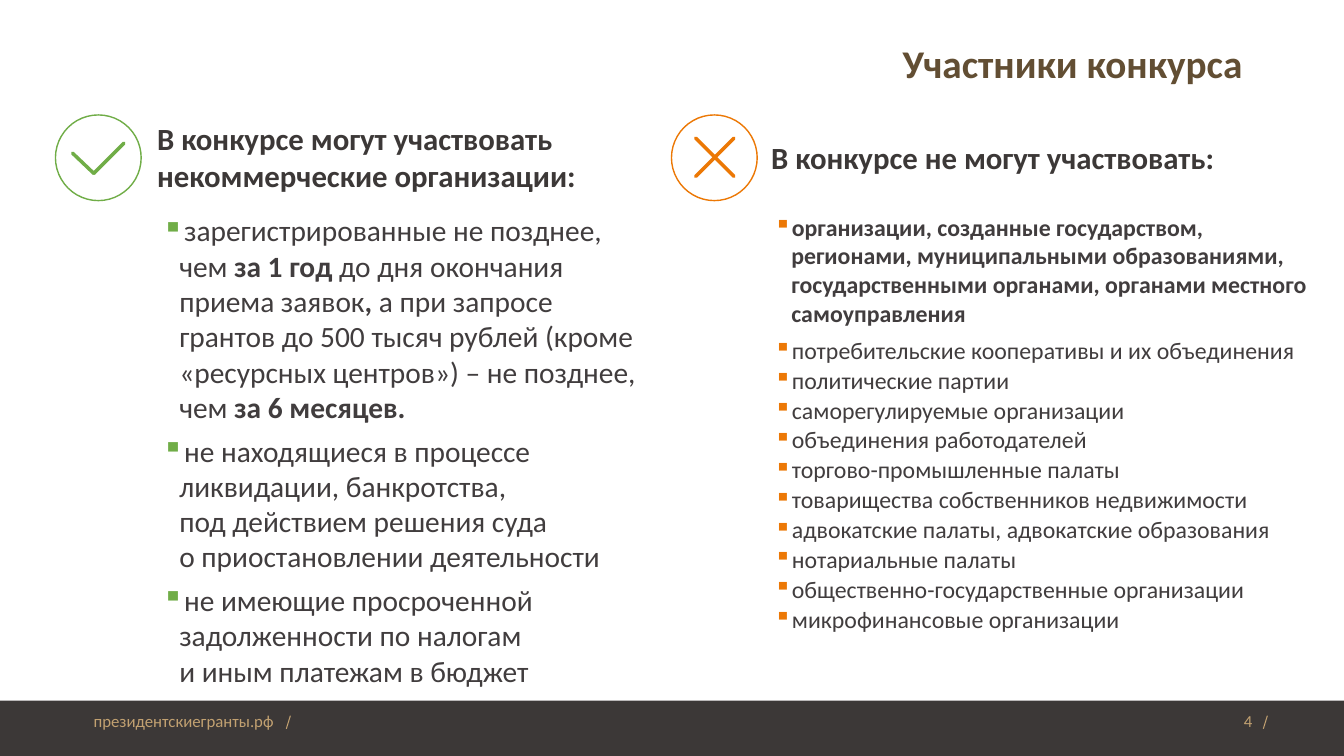
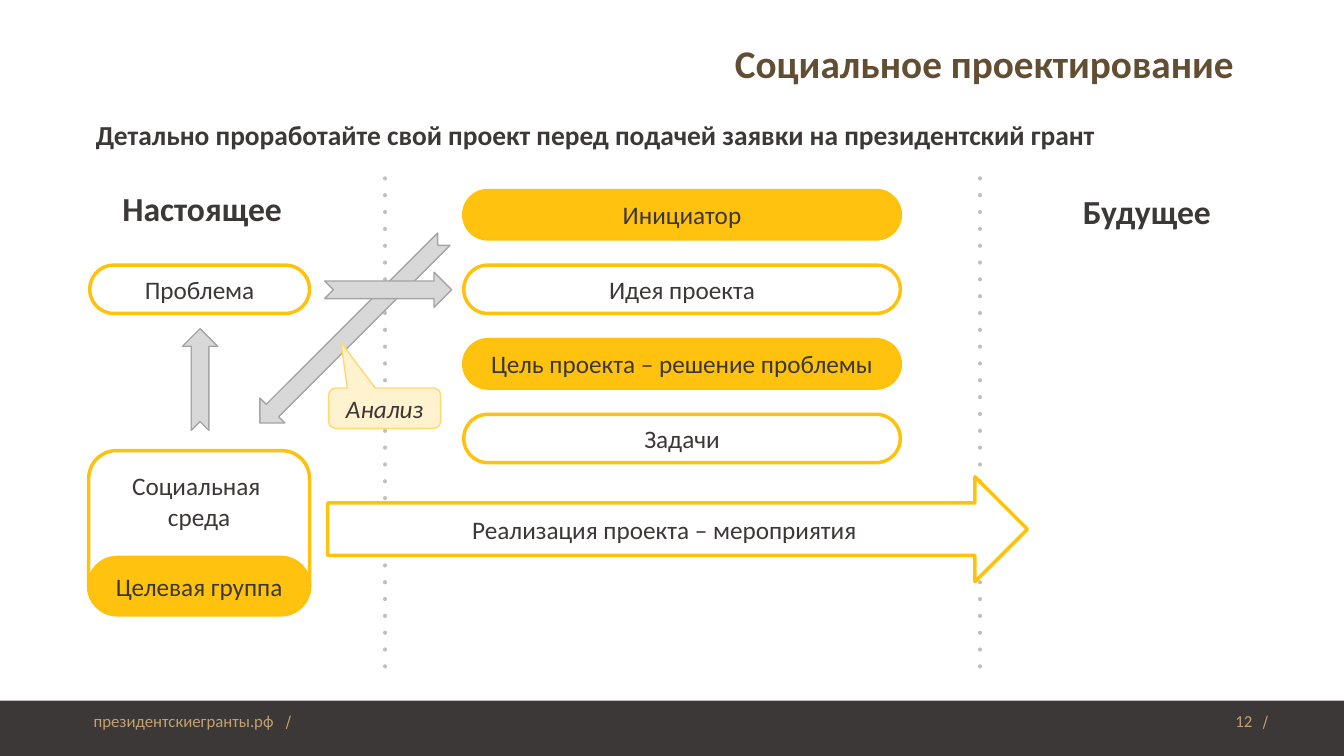
from dataclasses import dataclass
from typing import Any, Optional

import pptx
import pptx.dml.color
import pptx.enum.dml
import pptx.enum.shapes
import pptx.enum.text
import pptx.oxml.ns
import pptx.slide
import pptx.util
from lxml import etree

Inches = pptx.util.Inches
Pt = pptx.util.Pt
Preset = pptx.enum.shapes.MSO_SHAPE
Align = pptx.enum.text.PP_ALIGN
Anchor = pptx.enum.text.MSO_ANCHOR

FONT = "Calibri"
DARK = "3C3837"
BODY = "413D3E"
BROWN = "624E33"
SAND = "C2A171"
GREEN = "70AD47"
ORANGE = "EC7805"
YELLOW = "FFC20F"
YELLOW_LINE = "FFC20C"
GREY = "D8D8D8"
GREY_LINE = "A5A5A5"
DOT_GREY = "BFBFBF"
INSETS = (0.1, 0.05, 0.1, 0.05)


@dataclass(frozen=True)
class Area:
    left: float
    top: float
    width: float
    height: float

    def lengths(self) -> tuple:
        return tuple(Inches(v) for v in (self.left, self.top, self.width, self.height))


@dataclass(frozen=True)
class Span:
    text: str
    bold: bool = False


@dataclass(frozen=True)
class Para:
    spans: tuple[Span, ...]
    before: float = 0


@dataclass(frozen=True)
class Style:
    size: float
    color: str = DARK
    bold: bool = False
    italic: bool = False
    align: Any = Align.LEFT
    anchor: Any = Anchor.TOP
    insets: tuple = INSETS
    bullet: Optional[str] = None
    line_spacing: Optional[float] = None


@dataclass(frozen=True)
class Figure:
    """A preset shape, with its text if it has any."""
    area: Area
    preset: Any
    fill: Optional[str] = None
    line: Optional[str] = None
    weight: float = 1
    adjust: tuple = ()
    turn: float = 0
    text: str = ""
    style: Optional[Style] = None


@dataclass(frozen=True)
class Stroke:
    start: tuple[float, float]
    end: tuple[float, float]
    color: str
    weight: float
    dash: Optional[str] = None
    rounded: bool = False


TITLE = Style(28, BROWN, bold=True, align=Align.RIGHT, anchor=Anchor.MIDDLE, line_spacing=0.9)
FOOTER = Style(12, SAND, anchor=Anchor.MIDDLE)
PAGE_NUMBER = Style(12, SAND, align=Align.RIGHT, anchor=Anchor.MIDDLE)
HEADING = Style(22, bold=True)
LEAD = Style(19.6, bold=True, insets=(0.06, 0.03, 0.06, 0.03))
ERA = Style(24, bold=True, align=Align.CENTER, anchor=Anchor.MIDDLE)
LABEL = Style(18, align=Align.CENTER, anchor=Anchor.MIDDLE, insets=(0.05,) * 4)
TOP_LABEL = Style(18, align=Align.CENTER, insets=(0.05, 0.12, 0.05, 0.05))
CALLOUT = Style(18, italic=True, align=Align.CENTER, anchor=Anchor.MIDDLE, insets=(0.05,) * 4)


def rgb(color: str) -> pptx.dml.color.RGBColor:
    return pptx.dml.color.RGBColor.from_string(color)


def apply(target: Any, values: dict) -> None:
    for name, value in values.items():
        setattr(target, name, value)


def plain(text: str, before: float = 0, bold: bool = False) -> Para:
    return Para((Span(text, bold),), before)


def add_bullet(para: Any, color: str) -> None:
    props = para._p.get_or_add_pPr()
    apply_xml = {"marL": Inches(0.2), "indent": Inches(-0.17)}
    for name, value in apply_xml.items():
        props.set(name, str(int(value)))
    tint = etree.SubElement(props, pptx.oxml.ns.qn("a:buClr"))
    etree.SubElement(tint, pptx.oxml.ns.qn("a:srgbClr")).set("val", color)
    etree.SubElement(props, pptx.oxml.ns.qn("a:buChar")).set("char", "▪")


def write(frame: Any, paras: list[Para], style: Style) -> None:
    left, top, right, bottom = (Inches(v) for v in style.insets)
    apply(frame, {"word_wrap": True, "vertical_anchor": style.anchor, "margin_left": left,
                  "margin_top": top, "margin_right": right, "margin_bottom": bottom})
    for index, item in enumerate(paras):
        para = frame.paragraphs[0] if index == 0 else frame.add_paragraph()
        if style.bullet:
            add_bullet(para, style.bullet)
        apply(para, {"alignment": style.align, "space_before": Pt(item.before),
                     "line_spacing": style.line_spacing})
        for span in item.spans:
            for number, line in enumerate(span.text.split("\n")):
                if number:
                    para.add_line_break()
                run = para.add_run()
                run.text = line
                apply(run.font, {"name": FONT, "size": Pt(style.size),
                                 "bold": style.bold or span.bold, "italic": style.italic})
                run.font.color.rgb = rgb(style.color)


def add_text(page: pptx.slide.Slide, area: Area, paras: list[Para], style: Style) -> None:
    box = page.shapes.add_textbox(*area.lengths())
    write(box.text_frame, paras, style)


def add_figure(page: pptx.slide.Slide, figure: Figure) -> None:
    shape = page.shapes.add_shape(figure.preset, *figure.area.lengths())
    shape.shadow.inherit = False
    shape.rotation = figure.turn
    for index, value in enumerate(figure.adjust):
        shape.adjustments[index] = value
    for paint, color in ((shape.fill, figure.fill), (shape.line.fill, figure.line)):
        if color:
            paint.solid()
            paint.fore_color.rgb = rgb(color)
        else:
            paint.background()
    if figure.line:
        shape.line.width = Pt(figure.weight)
    if figure.style:
        write(shape.text_frame, [plain(figure.text)], figure.style)


def add_stroke(page: pptx.slide.Slide, stroke: Stroke) -> None:
    ends = [Inches(v) for v in stroke.start + stroke.end]
    connector = page.shapes.add_connector(pptx.enum.shapes.MSO_CONNECTOR.STRAIGHT, *ends)
    connector.line.color.rgb = rgb(stroke.color)
    connector.line.width = Pt(stroke.weight)
    props = connector.element.spPr
    outline = props.find(pptx.oxml.ns.qn("a:ln"))
    if stroke.rounded:
        outline.set("cap", "rnd")
    if stroke.dash:
        etree.SubElement(outline, pptx.oxml.ns.qn("a:prstDash")).set("val", stroke.dash)
    etree.SubElement(props, pptx.oxml.ns.qn("a:effectLst"))


def add_page(deck: Any, title: str, number: int) -> pptx.slide.Slide:
    """Add a slide with the shared title, footer band and page number."""
    page = deck.slides.add_slide(deck.slide_layouts[6])
    add_figure(page, Figure(Area(0, 6.95, 13.33, 0.55), Preset.RECTANGLE, DARK))
    add_text(page, Area(0.83, 6.95, 3.03, 0.4), [plain("президентскиегранты.рф")], FOOTER)
    for x in (2.84, 12.53):
        add_stroke(page, Stroke((x + 0.04, 7.1), (x, 7.23), SAND, 0.75))
    add_text(page, Area(2.69, 0.21, 9.73, 0.89), [plain(title)], TITLE)
    add_text(page, Area(11.68, 6.95, 0.84, 0.4), [plain(str(number))], PAGE_NUMBER)
    return page


def add_participants(deck: Any) -> None:
    page = add_page(deck, "Участники конкурса", 4)
    add_text(page, Area(1.46, 1.14, 5.11, 0.84),
             [plain("В конкурсе могут участвовать некоммерческие организации:")], HEADING)
    add_text(page, Area(7.55, 1.33, 5.45, 0.47),
             [plain("В конкурсе не могут участвовать:")], HEADING)

    allowed = [
        Para((Span("зарегистрированные не позднее,\nчем"), Span(" за 1 год ", True),
              Span("до дня окончания приема заявок"), Span(", ", True),
              Span("а при запросе грантов до 500 тысяч рублей "
                   "(кроме «ресурсных центров») – не позднее, чем "),
              Span("за 6 месяцев.", True))),
        plain("не находящиеся в процессе ликвидации, банкротства,\n"
              "под действием решения суда\nо приостановлении деятельности", 6),
        plain("не имеющие просроченной задолженности по налогам\nи иным платежам в бюджет", 6),
    ]
    add_text(page, Area(1.48, 2.06, 5.02, 5.04), allowed, Style(21, BODY, bullet=GREEN))

    excluded = [
        plain("организации, созданные государством, регионами, муниципальными образованиями, "
              "государственными органами, органами местного самоуправления", bold=True),
        plain("потребительские кооперативы и их объединения", 6),
    ]
    excluded += [plain(name, 1) for name in (
        "политические партии", "саморегулируемые организации", "объединения работодателей",
        "торгово-промышленные палаты", "товарищества собственников недвижимости",
        "адвокатские палаты, адвокатские образования", "нотариальные палаты",
        "общественно-государственные организации", "микрофинансовые организации")]
    add_text(page, Area(7.55, 2.06, 5.73, 4.55), excluded, Style(17, BODY, bullet=ORANGE))

    check = (((0.93, 1.72), (1.23, 1.42)), ((0.93, 1.72), (0.72, 1.52)))
    cross = (((6.9, 1.75), (7.28, 1.37)), ((7.28, 1.75), (6.9, 1.37)))
    for left, color, marks in ((0.55, GREEN, check), (6.66, ORANGE, cross)):
        add_figure(page, Figure(Area(left, 1.14, 0.85, 0.85), Preset.OVAL, line=color))
        for start, end in marks:
            add_stroke(page, Stroke(start, end, color, 2.5, rounded=True))


def pill(area: Area, text: str, fill: Optional[str] = None) -> Figure:
    return Figure(area, Preset.ROUNDED_RECTANGLE, fill, YELLOW_LINE, 2.5, (0.5,),
                  text=text, style=LABEL)


def grey_arrow(area: Area, turn: float = 0) -> Figure:
    return Figure(area, Preset.NOTCHED_RIGHT_ARROW, GREY, GREY_LINE, 1, (0.5, 0.5), turn)


def add_project_design(deck: Any) -> None:
    page = add_page(deck, "Социальное проектирование ", 12)
    for x in (3.82, 9.72):
        add_stroke(page, Stroke((x, 1.77), (x, 6.65), DOT_GREY, 3, "dot", True))
    add_text(page, Area(0.89, 1.14, 11.25, 0.68),
             [plain("Детально проработайте свой проект перед подачей заявки "
                    "на президентский грант")], LEAD)
    add_text(page, Area(1.02, 1.82, 1.97, 0.48), [plain("Настоящее")], ERA)
    add_text(page, Area(10.44, 1.84, 1.87, 0.51), [plain("Будущее")], ERA)

    steps = (("Инициатор", YELLOW), ("Идея проекта", None),
             ("Цель проекта – решение проблемы", YELLOW), ("Задачи", None))
    figures = [pill(Area(4.6, 1.89 + 0.74 * row, 4.33, 0.48), text, fill)
               for row, (text, fill) in enumerate(steps)]
    figures += [
        Figure(Area(3.25, 4.73, 6.94, 1.04), Preset.RIGHT_ARROW, "FFFFFF", YELLOW_LINE, 2.5,
               (0.5, 0.5), text="Реализация проекта – мероприятия", style=LABEL),
        pill(Area(0.89, 2.63, 2.18, 0.48), "Проблема"),
        pill(Area(0.88, 5.53, 2.19, 0.57), "Целевая группа", YELLOW),
        Figure(Area(0.88, 4.47, 2.19, 1.62), Preset.ROUNDED_RECTANGLE, None, YELLOW_LINE, 2.5,
               (0.17,), text="Социальная \nсреда", style=TOP_LABEL),
        grey_arrow(Area(2.2, 3.11, 2.58, 0.35), 135),
        Figure(Area(3.26, 3.85, 1.11, 0.4), Preset.ROUNDED_RECTANGULAR_CALLOUT, "FFF2CF",
               "FFD96F", 1, (-0.39, -1.63, 0.17), text="Анализ", style=CALLOUT),
        grey_arrow(Area(1.48, 3.59, 1.01, 0.35), 270),
        grey_arrow(Area(3.22, 2.7, 1.26, 0.35)),
    ]
    for figure in figures:
        add_figure(page, figure)


def main() -> None:
    deck = pptx.Presentation()
    apply(deck, {"slide_width": Inches(13.33), "slide_height": Inches(7.5)})
    add_participants(deck)
    add_project_design(deck)
    deck.save("out.pptx")


if __name__ == "__main__":
    main()
